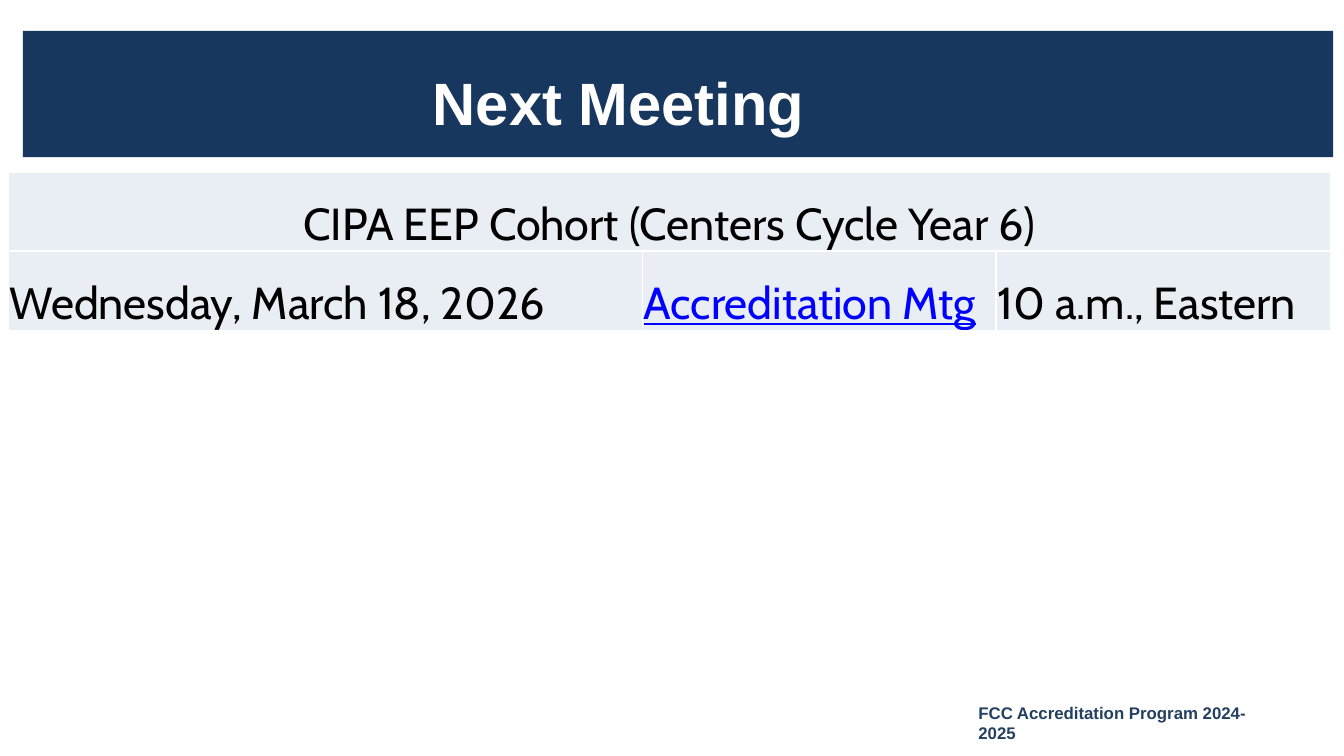
from lxml.etree import SubElement
from pptx import Presentation
from pptx.dml.color import RGBColor as Rgb
from pptx.enum.shapes import MSO_SHAPE as Shape
from pptx.enum.text import MSO_ANCHOR as Anchor, MSO_AUTO_SIZE as Fit, PP_ALIGN as Align
from pptx.oxml.ns import qn
from pptx.util import Inches, Pt

NAVY = Rgb(0x17, 0x37, 0x5E)
SLATE = Rgb(0x24, 0x40, 0x60)
PALE = Rgb(0xE9, 0xED, 0xF4)
WHITE = Rgb(255, 255, 255)
BLACK = Rgb(0, 0, 0)
BLUE = Rgb(0, 0, 255)

WIDE = 10
HIGH = WIDE * 9 / 16
COLS = [4.72, 2.63, 2.49]
ROW = 0.59

deck = Presentation()
deck.slide_width, deck.slide_height = Inches(WIDE), Inches(HIGH)
slide = deck.slides.add_slide(deck.slide_layouts[6])


def write(frame, text, color, **style):
    """Put one styled run in the first paragraph of a frame."""
    run = frame.paragraphs[0].add_run()
    run.text = text
    run.font.color.rgb = color
    for key, value in style.items():
        setattr(run.font, key, value)


# Title bar
bar = slide.shapes.add_shape(
    Shape.RECTANGLE, *map(Inches, (0.17, 0.23, 9.75, 0.94)))
bar.shadow.inherit = False
bar.fill.solid()
bar.fill.fore_color.rgb = NAVY
bar.line.fill.background()

# Title and footer
labels = [
    ("Next Meeting", (1.5, 0.49, 5.38, 0.54), 1.72, 32, WHITE),
    ("FCC Accreditation Program 2024-2025", (7.27, 5.23, 2.14, 0.13),
     0.01, 9, SLATE),
]
for text, place, indent, size, color in labels:
    frame = slide.shapes.add_textbox(*map(Inches, place)).text_frame
    frame.word_wrap = True
    frame.auto_size = Fit.SHAPE_TO_FIT_TEXT
    for side in ("left", "right", "top", "bottom"):
        setattr(frame, f"margin_{side}", 0)
    props = frame.paragraphs[0]._p.get_or_add_pPr()
    props.set("marL", str(Inches(indent)))
    write(frame, text, color, name="Arial", size=Pt(size), bold=True)

# Meeting table
rows = [
    ["CIPA EEP Cohort (Centers Cycle Year 6)", "", ""],
    ["Wednesday, March 18, 2026", "Accreditation Mtg", "10 a.m., Eastern"],
]
place = (0.06, 1.28, sum(COLS), ROW * len(rows))
table = slide.shapes.add_table(
    len(rows), len(COLS), *map(Inches, place)).table
table.first_row = table.horz_banding = False
for col, width in zip(table.columns, COLS):
    col.width = Inches(width)
for row in table.rows:
    row.height = Inches(ROW)
table.cell(0, 0).merge(table.cell(0, len(COLS) - 1))

inset = Inches(0.01)
layout = {"margin_left": inset, "margin_right": inset,
          "margin_top": inset, "margin_bottom": 0,
          "vertical_anchor": Anchor.BOTTOM}
for r, words in enumerate(rows):
    for c, text in enumerate(words):
        cell = table.cell(r, c)
        for key, value in layout.items():
            setattr(cell, key, value)
        props = cell._tc.get_or_add_tcPr()
        for edge in ("a:lnL", "a:lnR", "a:lnT", "a:lnB"):
            line = SubElement(props, qn(edge), w=str(Pt(1)))
            fill = SubElement(line, qn("a:solidFill"))
            SubElement(fill, qn("a:srgbClr"), val=str(WHITE))
        cell.fill.solid()
        cell.fill.fore_color.rgb = PALE
        if text:
            link = text == "Accreditation Mtg"
            write(cell.text_frame, text, BLUE if link else BLACK,
                  name="Cabin", size=Pt(24), underline=link)
table.cell(0, 0).text_frame.paragraphs[0].alignment = Align.CENTER

deck.save("out.pptx")
